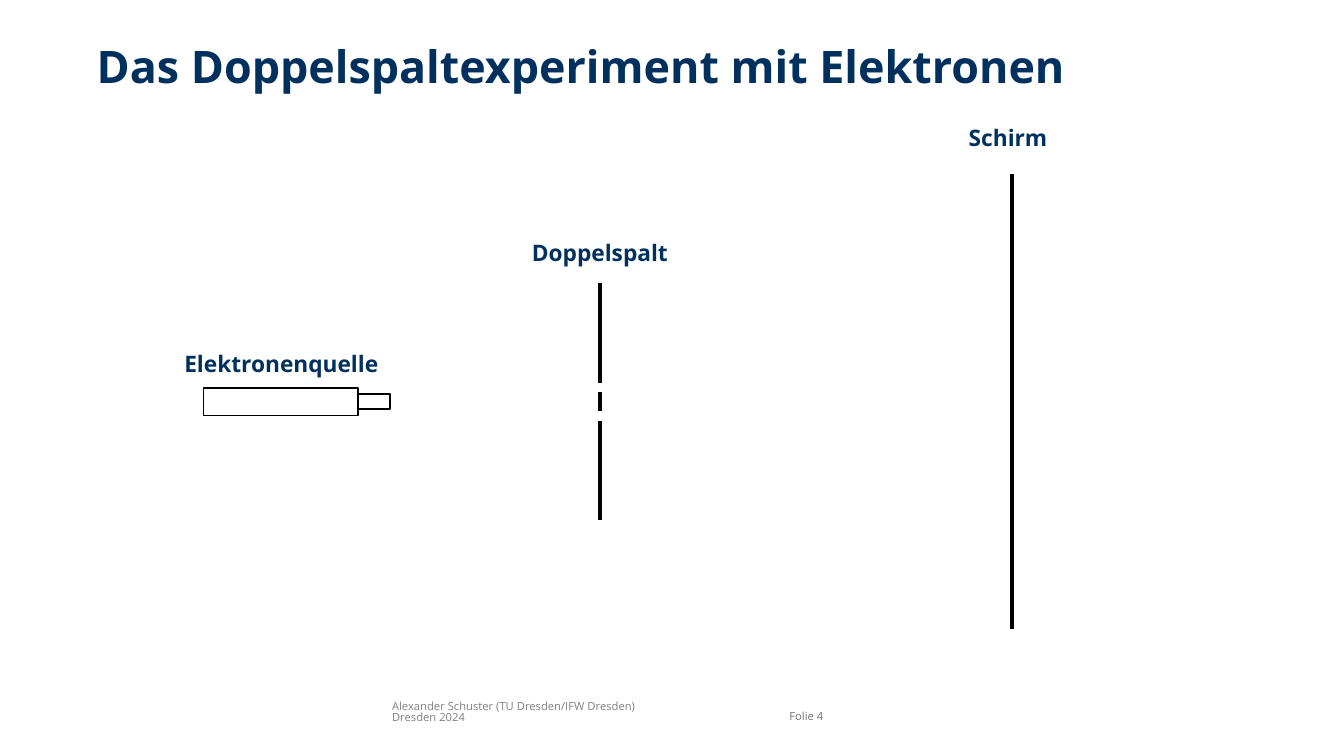
from pptx import Presentation
from pptx.dml.color import RGBColor
from pptx.enum.shapes import MSO_CONNECTOR, MSO_SHAPE
from pptx.enum.text import MSO_ANCHOR, PP_ALIGN
from pptx.oxml.ns import qn
from pptx.util import Inches, Pt
from lxml import etree

FONT = "Open Sans"
NAVY, BLACK = "00305D", "000000"


def color(hex_code):
    return RGBColor.from_string(hex_code)


def add_text(slide, box, lines, size, hex_code, bold=False, align=PP_ALIGN.LEFT,
             anchor=MSO_ANCHOR.TOP, insets=(0.1, 0.05), spacing=1.0):
    """Text box with one paragraph per line."""
    frame = slide.shapes.add_textbox(*map(Inches, box)).text_frame
    frame.word_wrap = True
    frame.vertical_anchor = anchor
    frame.margin_left = frame.margin_right = Inches(insets[0])
    frame.margin_top = frame.margin_bottom = Inches(insets[1])
    for i, line in enumerate(lines):
        paragraph = frame.add_paragraph() if i else frame.paragraphs[0]
        paragraph.alignment = align
        paragraph.line_spacing = spacing
        run = paragraph.add_run()
        run.text = line
        run.font.name = FONT
        run.font.size = Pt(size)
        run.font.bold = bold
        run.font.color.rgb = color(hex_code)


def add_label(slide, box, name, align=PP_ALIGN.CENTER):
    add_text(slide, box, [name], 16.2, NAVY, bold=True, align=align)


def add_outline(shapes, box):
    """Unfilled rectangle with a thin black border."""
    part = shapes.add_shape(MSO_SHAPE.RECTANGLE, *map(Inches, box))
    part.shadow.inherit = False
    part.fill.background()
    part.line.color.rgb = color(BLACK)
    part.line.width = Pt(1)


def add_wall(shapes, x, top, bottom):
    """Thick vertical line."""
    wall = shapes.add_connector(MSO_CONNECTOR.STRAIGHT, Inches(x), Inches(top),
                                Inches(x), Inches(bottom))
    wall.line.color.rgb = color(BLACK)
    wall.line.width = Pt(3)
    etree.SubElement(wall._element.spPr, qn("a:effectLst"))


def main():
    prs = Presentation()
    prs.slide_width, prs.slide_height = Inches(13.33), Inches(7.5)
    slide = prs.slides.add_slide(prs.slide_layouts[6])

    # Footer
    add_text(slide, (7.83, 6.9, 0.77, 0.4), ["Folie 4"], 8, "727277",
             anchor=MSO_ANCHOR.MIDDLE, insets=(0, 0))
    add_text(slide, (3.79, 6.91, 2.79, 0.37),
             ["Alexander Schuster (TU Dresden/IFW Dresden)", "Dresden 2024"],
             8, "808080", spacing=0.85)

    # Title
    add_text(slide, (0.96, 0.38, 11.57, 0.75),
             ["Das Doppelspaltexperiment mit Elektronen"], 32, NAVY,
             bold=True, insets=(0, 0))

    # Electron source: body and nozzle
    source = slide.shapes.add_group_shape()
    add_outline(source.shapes, (2.02, 3.85, 1.53, 0.27))
    add_outline(source.shapes, (3.55, 3.91, 0.32, 0.15))
    add_label(slide, (1.56, 3.42, 2.46, 0.37), "Elektronenquelle")

    # Double slit: three wall pieces with two gaps
    double_slit = slide.shapes.add_group_shape()
    for top, bottom in ((2.81, 3.8), (3.89, 4.08), (4.18, 5.16)):
        add_wall(double_slit.shapes, 5.95, top, bottom)
    add_label(slide, (5.12, 2.32, 1.66, 0.4), "Doppelspalt")

    # Screen
    add_wall(slide.shapes, 10.04, 1.73, 6.24)
    add_label(slide, (9.51, 1.18, 1.06, 0.4), "Schirm", PP_ALIGN.LEFT)

    prs.save("out.pptx")


if __name__ == "__main__":
    main()
